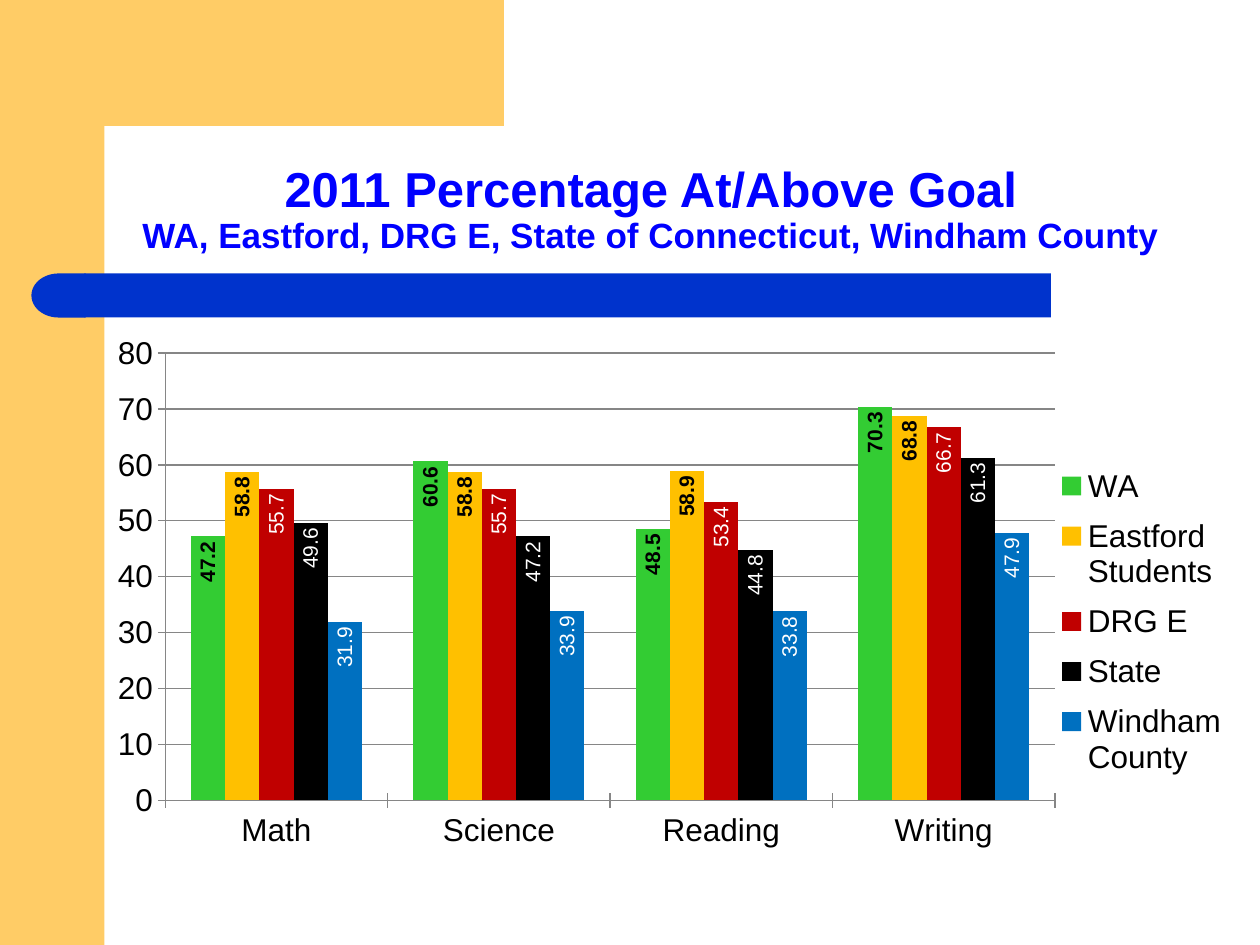
from math import cos, pi, sin

from lxml.etree import SubElement
from pptx import Presentation
from pptx.chart.data import CategoryChartData
from pptx.dml.color import RGBColor
from pptx.enum.chart import XL_CHART_TYPE as ChartType
from pptx.enum.chart import XL_LABEL_POSITION as LabelPosition
from pptx.enum.chart import XL_LEGEND_POSITION as LegendPosition
from pptx.enum.chart import XL_TICK_MARK as TickMark
from pptx.enum.shapes import MSO_SHAPE as Shape
from pptx.enum.text import MSO_ANCHOR as Anchor
from pptx.enum.text import MSO_AUTO_SIZE as AutoSize
from pptx.enum.text import PP_ALIGN as Align
from pptx.oxml.ns import qn
from pptx.util import Inches, Pt

COLORS = {
    "sand": "FFCC66", "band": "0033CC", "title": "0000FF", "grid": "868686",
    "green": "33CC33", "gold": "FFC000", "red": "C00000",
    "black": "000000", "blue": "0070C0", "white": "FFFFFF",
}
SUBJECTS = ["Math", "Science", "Reading", "Writing"]
SERIES = [
    ("WA", [47.2, 60.6, 48.5, 70.3], "green", "black", True),
    ("Eastford Students", [58.8, 58.8, 58.9, 68.8], "gold", "black", True),
    ("DRG E", [55.7, 55.7, 53.4, 66.7], "red", "white", False),
    ("State", [49.6, 47.2, 44.8, 61.3], "black", "white", False),
    ("Windham County", [31.9, 33.9, 33.8, 47.9], "blue", "white", False),
]


def rgb(name):
    return RGBColor.from_string(COLORS[name])


def format_font(font, size, color, bold=False, name="Arial"):
    font.name, font.size, font.bold = name, Pt(size), bold
    font.color.rgb = rgb(color)


def add_text(para, text, **style):
    span = para.add_run()
    span.text = text
    format_font(span.font, **style)


def set_layout(element, index, *bounds, inner=False):
    for old in element.findall(qn("c:layout")):
        element.remove(old)
    layout = SubElement(element, qn("c:layout"))
    element.insert(index, layout)
    manual = SubElement(layout, qn("c:manualLayout"))
    settings = [("layoutTarget", "inner")] if inner else []
    settings += [("xMode", "edge"), ("yMode", "edge")]
    settings += zip("xywh", bounds)
    for tag, value in settings:
        SubElement(manual, qn(f"c:{tag}")).set("val", str(value))


class SlideBuilder:
    def __init__(self, slide):
        self.slide = slide
        self.shapes = slide.shapes

    def paint(self, shape, color):
        shape.shadow.inherit = False
        shape.fill.solid()
        shape.fill.fore_color.rgb = rgb(color)
        shape.line.fill.background()

    def shape(self, kind, bounds, color, flip=False):
        shape = self.shapes.add_shape(kind, *map(Inches, bounds))
        self.paint(shape, color)
        if flip:
            shape._element.spPr.xfrm.set("flipH", "1")

    def outline(self, points, color):
        builder = self.shapes.build_freeform(*points[0], scale=Inches(1))
        builder.add_line_segments(points[1:], close=True)
        self.paint(builder.convert_to_shape(), color)

    def title(self, lines, bounds):
        box = self.shapes.title
        box.left, box.top, box.width, box.height = map(Inches, bounds)
        frame = box.text_frame
        frame.auto_size = AutoSize.NONE
        frame.word_wrap = True
        frame.vertical_anchor = Anchor.BOTTOM
        para = frame.paragraphs[0]
        para.alignment = Align.CENTER
        para.line_spacing = 0.9
        for number, (text, size) in enumerate(lines):
            if number:
                para.add_line_break()
            add_text(para, text, size=size, color="title", bold=True)

    def column_chart(self, categories, rows, bounds):
        data = CategoryChartData()
        data.categories = categories
        for name, values, *_ in rows:
            data.add_series(name, values)
        chart = self.shapes.add_chart(
            ChartType.COLUMN_CLUSTERED, *map(Inches, bounds), data).chart
        chart.has_title = False
        format_font(chart.font, 18, "black")
        self.axes(chart)
        plot = chart.plots[0]
        plot.gap_width, plot.overlap, plot.vary_by_categories = 150, 0, False
        for series, (_, _, fill, label_color, bold) in zip(plot.series, rows):
            series.format.fill.solid()
            series.format.fill.fore_color.rgb = rgb(fill)
            series.invert_if_negative = False
            self.labels(series, label_color, bold)
        chart.has_legend = True
        chart.legend.position = LegendPosition.RIGHT
        chart.legend.include_in_layout = False
        set_layout(chart.legend._element, 1, 0.83, 0.23, 0.17, 0.6)
        plot_area = chart._chartSpace.chart.plotArea
        set_layout(plot_area, 0, 0.07, 0.05, 0.77, 0.8, inner=True)

    def axes(self, chart):
        value_axis = chart.value_axis
        value_axis.minimum_scale, value_axis.maximum_scale = 0, 80
        value_axis.major_unit = 10
        value_axis.has_major_gridlines = True
        lines = [value_axis.major_gridlines.format.line]
        for axis in (chart.category_axis, value_axis):
            axis.major_tick_mark = TickMark.CROSS
            axis.minor_tick_mark = TickMark.NONE
            lines.append(axis.format.line)
        for line in lines:
            line.color.rgb = rgb("grid")
            line.width = Pt(0.75)

    def labels(self, series, color, bold):
        labels = series.data_labels
        labels.show_value = True
        labels.position = LabelPosition.INSIDE_END
        format_font(labels.font, 12, color, bold)
        body = labels._element.find(qn("c:txPr")).find(qn("a:bodyPr"))
        body.set("rot", "-5400000")
        body.set("vert", "horz")


def corner_points():
    edge, radius, steps = 0.83, 0.33, 12
    center = edge + radius
    arc = []
    for step in range(steps + 1):
        angle = pi / 2 * step / steps
        arc.append((center - radius * sin(angle), center - radius * cos(angle)))
    return [(0.5, 0), (3.5, 0), (3.5, edge), *arc, (edge, 1.28), (0.5, 1.28)]


def main():
    deck = Presentation()
    deck.slide_width, deck.slide_height = Inches(10), Inches(7.5)
    page = SlideBuilder(deck.slides.add_slide(deck.slide_layouts[5]))
    page.shape(Shape.RECTANGLE, (0, 0, 0.83, 7.5), "sand")
    page.outline(corner_points(), "sand")
    page.shape(Shape.RECTANGLE, (0.67, 2.17, 7.67, 0.35), "band")
    page.shape(Shape.FLOWCHART_DELAY, (0.25, 2.17, 0.43, 0.35), "band", flip=True)
    page.title([
        ("2011 Percentage At/Above Goal", 28),
        ("WA, Eastford, DRG E, State of Connecticut, Windham County", 20),
    ], (0.83, 0.83, 8.67, 1.25))
    page.column_chart(SUBJECTS, SERIES, (0.67, 2.58, 9.17, 4.44))
    deck.save("out.pptx")


if __name__ == "__main__":
    main()
